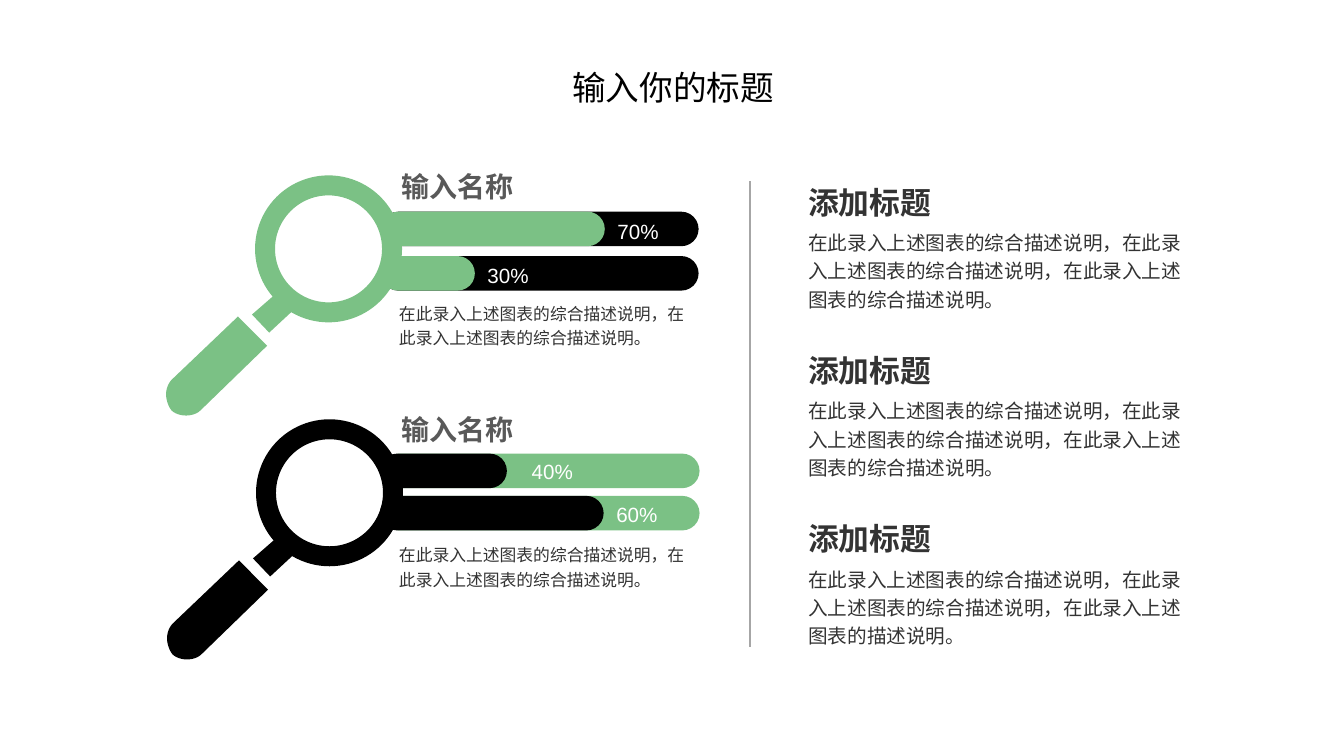
from dataclasses import dataclass

from lxml import etree
from pptx import Presentation
from pptx.dml.color import RGBColor
from pptx.enum.shapes import MSO_CONNECTOR, MSO_SHAPE
from pptx.enum.text import MSO_AUTO_SIZE, PP_ALIGN
from pptx.oxml.ns import qn
from pptx.shapes.autoshape import Shape
from pptx.shapes.shapetree import GroupShapes, SlideShapes
from pptx.util import Pt

ROUND = MSO_SHAPE.ROUNDED_RECTANGLE
DONUT = MSO_SHAPE.DONUT
STRAIGHT = MSO_CONNECTOR.STRAIGHT
FIT = MSO_AUTO_SIZE.SHAPE_TO_FIT_TEXT
LEFT, CENTER = PP_ALIGN.LEFT, PP_ALIGN.CENTER

GREEN = RGBColor(0x7B, 0xC1, 0x85)
BLACK = RGBColor(0, 0, 0)
WHITE = RGBColor(0xFF, 0xFF, 0xFF)
DARK = RGBColor(0x33, 0x33, 0x33)
GRAY = RGBColor(0x59, 0x59, 0x59)
RULE = RGBColor(0xA6, 0xA6, 0xA6)

HAN = "Noto Sans CJK SC"
LATIN = "Arial"

Point = tuple[float, float]
Shapes = SlideShapes | GroupShapes


@dataclass
class Style:
    size: float
    color: RGBColor
    font: str = HAN
    bold: bool = False
    align: PP_ALIGN = LEFT
    space: float | None = None
    wrap: bool = True


@dataclass
class Bar:
    label: str
    top: float
    width: float
    box: float = 51.1


@dataclass
class Panel:
    main: RGBColor
    rest: RGBColor
    lens: Point
    track: float
    start: float
    lift: float
    head: float
    body: float
    bars: list[Bar]


TITLE = Style(24, BLACK)
NAME = Style(20, GRAY, bold=True, wrap=False)
SMALL = Style(12, DARK, space=1.2)
HEAD = Style(22, DARK, bold=True, wrap=False)
BODY = Style(14, DARK, space=1.2)
SHARE = Style(14.7, WHITE, LATIN, align=CENTER, space=1.2)

TRACK_W, BAR_H = 226.8, 24.7
RING, HOLE = 105, 0.136

# Lens parts, measured from the top left of the ring
NECK = [(31, 92.9), (10.1, 112.3), (-2.2, 99.4), (19.4, 80.6)]
SIDE = [(-59.8, 146.2), (-64.8, 151.9), (-64.8, 160.6), (-59.8, 167.8)]
TIP = [(-59.8, 167.8), (-54.7, 172.8), (-43.9, 172.8), (-38.9, 167.8)]

PHRASE = "在此录入上述图表的综合描述说明"
PANELS = [
    Panel(GREEN, BLACK, (182.2, 125.3), 272.2, 272.2, 1.8, 117.4, 210.2,
          [Bar("70%", 151.2, 159.8), Bar("30%", 182.9, 67)]),
    Panel(BLACK, GREEN, (182.9, 299.5), 272.9, 271.4, 2.9, 290.9, 383,
          [Bar("40%", 324, 90.7, 68.4), Bar("60%", 354.2, 159.8)]),
]
NOTES = [PHRASE, PHRASE, "在此录入上述图表的描述说明"]


def paint(shape: Shape, color: RGBColor) -> None:
    shape.shadow.inherit = False
    shape.fill.solid()
    shape.fill.fore_color.rgb = color
    shape.line.fill.background()


def write(shapes: Shapes, text: str, left: float, top: float,
          width: float, height: float, style: Style) -> None:
    box = shapes.add_textbox(Pt(left), Pt(top), Pt(width), Pt(height))
    frame = box.text_frame
    frame.text = text
    frame.word_wrap = style.wrap
    frame.auto_size = FIT
    para = frame.paragraphs[0]
    para.alignment = style.align
    if style.space:
        para.line_spacing = style.space
    run = para.runs[0]
    run.font.size = Pt(style.size)
    run.font.bold = style.bold
    run.font.color.rgb = style.color
    run.font.name = style.font
    props = run._r.get_or_add_rPr()
    etree.SubElement(props, qn("a:ea")).set("typeface", style.font)


def pill(shapes: Shapes, left: float, top: float, width: float,
         color: RGBColor) -> None:
    shape = shapes.add_shape(ROUND, Pt(left), Pt(top), Pt(width), Pt(BAR_H))
    shape.adjustments[0] = 0.5
    paint(shape, color)


def curve(ends: list[Point], steps: int = 12) -> list[Point]:
    points = []
    for step in range(steps + 1):
        t = step / steps
        parts = ((1 - t) ** 3, 3 * t * (1 - t) ** 2, 3 * t * t * (1 - t), t ** 3)
        points.append((sum(p * x for p, (x, _) in zip(parts, ends)),
                       sum(p * y for p, (_, y) in zip(parts, ends))))
    return points


def outline(shapes: Shapes, origin: Point, points: list[Point],
            color: RGBColor) -> None:
    left, top = origin
    spots = [(Pt(left + x), Pt(top + y)) for x, y in points]
    pen = shapes.build_freeform(*spots[0])
    pen.add_line_segments(spots[1:], close=True)
    paint(pen.convert_to_shape(), color)


def draw_lens(shapes: Shapes, origin: Point, color: RGBColor) -> None:
    left, top = origin
    outline(shapes, origin, NECK, color)
    ring = shapes.add_shape(DONUT, Pt(left), Pt(top), Pt(RING), Pt(RING))
    ring.adjustments[0] = HOLE
    paint(ring, color)
    grip = [(-12.2, 100.8), *curve(SIDE), *curve(TIP)[1:], (8.6, 121.7)]
    outline(shapes, origin, grip, color)


def draw_panel(shapes: SlideShapes, panel: Panel) -> None:
    for bar in panel.bars:
        group = shapes.add_group_shape().shapes
        pill(group, panel.track, bar.top, TRACK_W, panel.rest)
        pill(group, panel.start, bar.top, bar.width, panel.main)
        write(group, bar.label, panel.start + bar.width - 1.8,
              bar.top - panel.lift, bar.box, 28.8, SHARE)
    draw_lens(shapes.add_group_shape().shapes, panel.lens, panel.main)
    write(shapes, "输入名称", 279.4, panel.head, 95, 31.7, NAME)
    write(shapes, f"{PHRASE}，{PHRASE}。", 277.9, panel.body, 221.8, 42.5, SMALL)


def main() -> None:
    deck = Presentation()
    deck.slide_width, deck.slide_height = Pt(960), Pt(540)
    shapes = deck.slides.add_slide(deck.slide_layouts[6]).shapes

    # Divider
    line = shapes.add_connector(STRAIGHT, Pt(535.7), Pt(129.6), Pt(535.7), Pt(462.2))
    line.line.color.rgb = RULE
    line.line.width = Pt(1)
    etree.SubElement(line._element.spPr, qn("a:effectLst"))

    # Lenses with bars
    for panel in PANELS:
        draw_panel(shapes, panel)

    # Notes on the right
    for row, last in enumerate(NOTES):
        top = 127.5 + 120.1 * row
        group = shapes.add_group_shape().shapes
        write(group, "添加标题", 570.2, top, 103.7, 33.8, HEAD)
        write(group, f"{PHRASE}，{PHRASE}，{last}。", 570.2, top + 30.7, 285.1, 68.4, BODY)

    # Title
    write(shapes, "输入你的标题", 401.8, 44.6, 190.1, 36, TITLE)
    deck.save("out.pptx")


if __name__ == "__main__":
    main()
